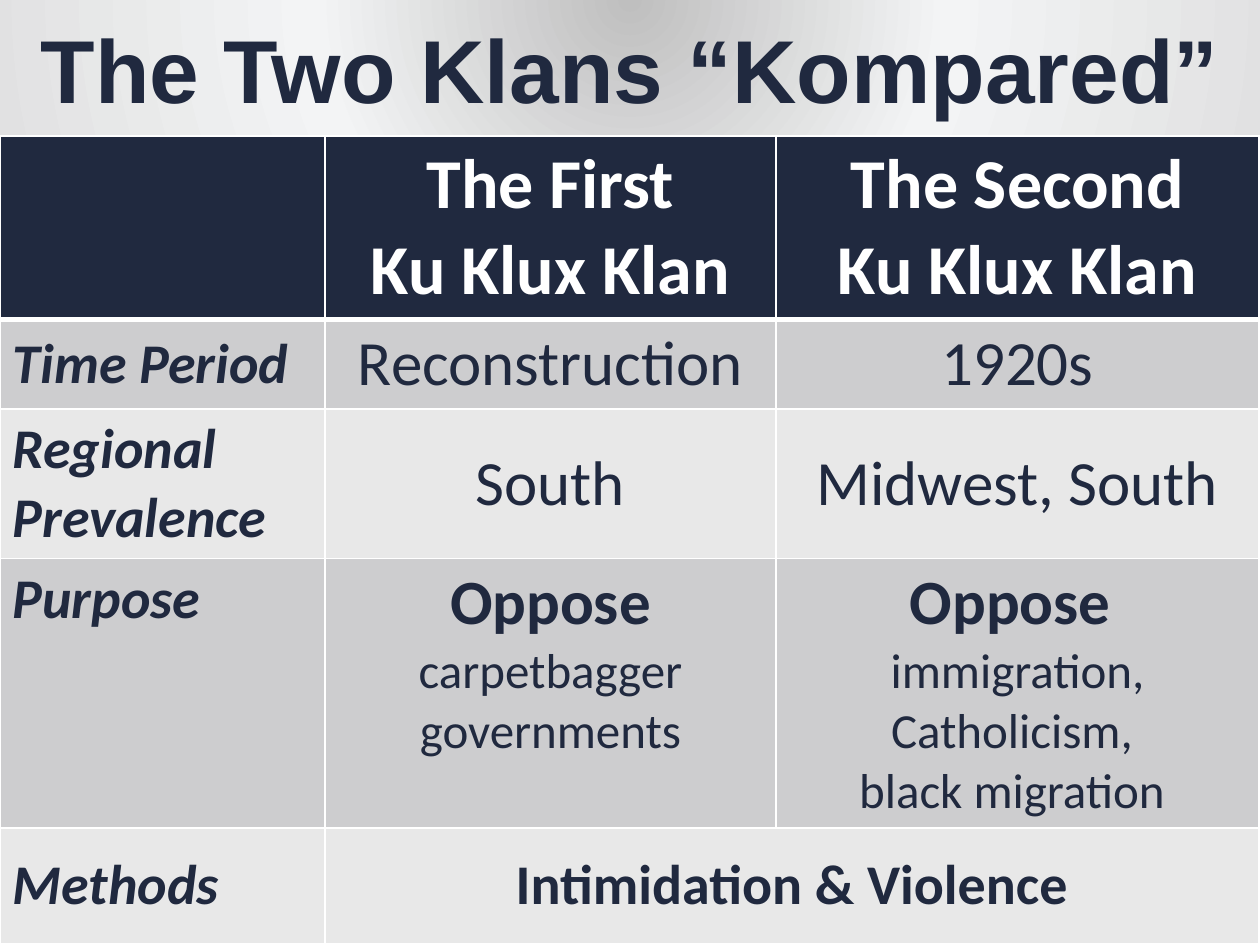
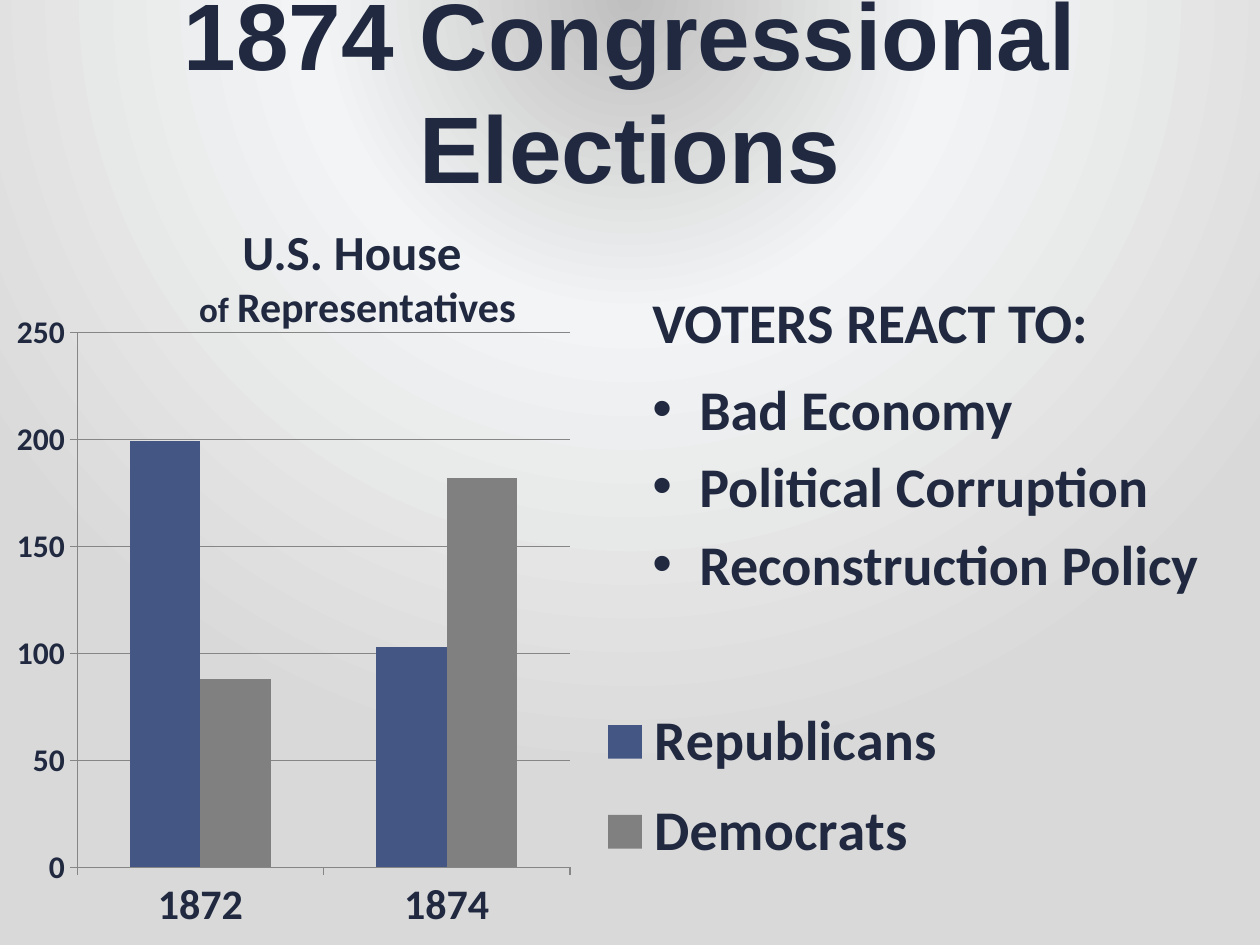
from pptx import Presentation
from pptx import util as u
from pptx.chart.data import CategoryChartData
from pptx.dml.color import RGBColor
from pptx.enum import chart as ch, text as tx
from pptx.oxml import parse_xml
from pptx.oxml.ns import qn
from lxml import etree

PX = 914400 / 126
WIDTH, HEIGHT = 1260, 945
COLORS = {
    "navy": "20293F", "white": "FFFFFF", "band_dark": "CDCDCF", "band_light": "E8E8E8",
    "republican": "435684", "democrat": "808080", "grid": "868686",
    "glow": "BFBFBF", "halo": "F3F4F5", "edge": "D9D9D9",
}
NS = ('xmlns:a="http://schemas.openxmlformats.org/drawingml/2006/main" '
      'xmlns:p="http://schemas.openxmlformats.org/presentationml/2006/main" '
      'xmlns:c="http://schemas.openxmlformats.org/drawingml/2006/chart"')
LEFT, CENTER = tx.PP_ALIGN.LEFT, tx.PP_ALIGN.CENTER
TOP, MIDDLE, BOTTOM = tx.MSO_ANCHOR.TOP, tx.MSO_ANCHOR.MIDDLE, tx.MSO_ANCHOR.BOTTOM


def px(length):
    return u.Emu(round(length * PX))


def rgb(name):
    return RGBColor.from_string(COLORS[name])


def style_font(font, size, bold=True, italic=False, color="navy", face="Calibri"):
    font.name, font.size = face, u.Pt(size)
    font.bold, font.italic = bold, italic
    font.color.rgb = rgb(color)


def write(frame, *paragraphs, align=LEFT, gap=0, bullet=False, **font_format):
    for index, content in enumerate(paragraphs):
        paragraph = frame.add_paragraph() if index else frame.paragraphs[0]
        if bullet:
            properties = paragraph._p.get_or_add_pPr()
            properties.set("marL", str(px(47)))
            properties.set("indent", str(-px(47)))
            properties.append(parse_xml(f'<a:buFont {NS} typeface="Arial"/>'))
            properties.append(parse_xml(f'<a:buChar {NS} char="•"/>'))
        paragraph.alignment = align
        if index and gap:
            paragraph.space_before = u.Pt(gap)
        runs = [(content, {})] if isinstance(content, str) else content
        for words, changes in runs:
            run = paragraph.add_run()
            run.text = words
            style_font(run.font, **{**font_format, **changes})


def set_background(master):
    stops = "".join(
        f'<a:gs pos="{position * 1000}"><a:srgbClr val="{COLORS[name]}"/></a:gs>'
        for position, name in ((0, "glow"), (40, "halo"), (100, "edge")))
    content = master.element.cSld
    for old in content.findall(qn("p:bg")):
        content.remove(old)
    content.insert(0, parse_xml(
        f'<p:bg {NS}><p:bgPr><a:gradFill rotWithShape="1"><a:gsLst>{stops}</a:gsLst>'
        '<a:path path="circle"><a:fillToRect l="50000" t="-80000" r="50000" b="180000"/>'
        '</a:path></a:gradFill><a:effectLst/></p:bgPr></p:bg>'))


def titled_slide(prs, heading, size, top, height):
    slide = prs.slides.add_slide(prs.slide_layouts[5])
    title = slide.shapes.title
    title.left, title.top, title.width, title.height = map(px, (0, top, WIDTH, height))
    frame = title.text_frame
    frame.word_wrap = True
    frame.auto_size = tx.MSO_AUTO_SIZE.NONE
    frame.vertical_anchor = MIDDLE
    write(frame, heading, align=CENTER, size=size, face="Arial")
    return slide


def add_text(slide, box, *paragraphs, anchor=TOP, **text_format):
    frame = slide.shapes.add_textbox(*map(px, box)).text_frame
    frame.word_wrap = True
    frame.vertical_anchor = anchor
    write(frame, *paragraphs, **text_format)


def border_cell(cell, bottom_width):
    properties = cell._tc.get_or_add_tcPr()
    widths = {"lnL": 1, "lnR": 1, "lnT": 1, "lnB": bottom_width}
    for position, (side, width) in enumerate(widths.items()):
        properties.insert(position, parse_xml(
            f'<a:{side} {NS} w="{u.Pt(width)}"><a:solidFill>'
            f'<a:srgbClr val="{COLORS["white"]}"/></a:solidFill></a:{side}>'))


def comparison_table(slide, box):
    header = dict(size=40, color="white", align=CENTER)
    label = dict(size=32, italic=True)
    answer = dict(size=36, bold=False, align=CENTER)
    purpose = dict(size=28, bold=False, align=CENTER)
    oppose = ("Oppose ", dict(size=36, bold=True))
    rows = [
        (181, TOP, [None, (["The First", "Ku Klux Klan"], header),
                    (["The Second", "Ku Klux Klan"], header)]),
        (88, MIDDLE, [(["Time Period"], label), (["Reconstruction"], answer),
                      (["1920s"], answer)]),
        (147, MIDDLE, [(["Regional Prevalence"], label), (["South"], answer),
                       (["Midwest, South"], answer)]),
        (266, TOP, [(["Purpose"], label),
                    ([[oppose, ("carpetbagger governments", {})]], purpose),
                    ([[oppose], "immigration, Catholicism, ", "black migration "], purpose)]),
        (116, MIDDLE, [(["Methods"], label),
                       (["Intimidation & Violence"], dict(size=32, align=CENTER)), None]),
    ]
    table = slide.shapes.add_table(len(rows), 3, *map(px, box)).table
    table.horz_banding = False
    for column, width in zip(table.columns, (325, 451, 483)):
        column.width = px(width)
    for r, (height, anchor, entries) in enumerate(rows):
        table.rows[r].height = px(height)
        for c, entry in enumerate(entries):
            cell = table.cell(r, c)
            cell.fill.solid()
            cell.fill.fore_color.rgb = rgb(
                "navy" if r == 0 else "band_dark" if r % 2 else "band_light")
            border_cell(cell, 1 if r else 3)
            cell.vertical_anchor = anchor
            if entry:
                paragraphs, text_format = entry
                write(cell.text_frame, *paragraphs, **text_format)
    table.cell(4, 1).merge(table.cell(4, 2))


def manual_layout(x, y, w, h, inner=False):
    target = '<c:layoutTarget val="inner"/>' if inner else ""
    modes = '<c:xMode val="edge"/><c:yMode val="edge"/>'
    sizes = "".join(f'<c:{key} val="{value}"/>' for key, value in zip("xywh", (x, y, w, h)))
    return parse_xml(f'<c:layout {NS}><c:manualLayout>{target}{modes}{sizes}'
                     '</c:manualLayout></c:layout>')


def house_chart(slide, box):
    seats = CategoryChartData()
    seats.categories = ["1872", "1874"]
    seats.add_series("Republicans", (199, 103))
    seats.add_series("Democrats", (88, 182))
    chart = slide.shapes.add_chart(
        ch.XL_CHART_TYPE.COLUMN_CLUSTERED, *map(px, box), seats).chart
    style_font(chart.font, 18)
    chart.has_title = False

    plot = chart.plots[0]
    plot.gap_width, plot.overlap = 150, 0
    plot.vary_by_categories = False
    for series, party in zip(plot.series, ("republican", "democrat")):
        series.format.fill.solid()
        series.format.fill.fore_color.rgb = rgb(party)

    years, count = chart.category_axis, chart.value_axis
    count.minimum_scale, count.maximum_scale, count.major_unit = 0, 250, 50
    count.has_major_gridlines = True
    for axis, size in ((years, 24), (count, 18)):
        style_font(axis.tick_labels.font, size)
        axis.major_tick_mark = ch.XL_TICK_MARK.OUTSIDE
    for rule in (years, count, count.major_gridlines):
        rule.format.line.color.rgb = rgb("grid")
        rule.format.line.width = u.Pt(0.75)

    chart.has_legend = True
    legend = chart.legend
    legend.position = ch.XL_LEGEND_POSITION.RIGHT
    legend.include_in_layout = False
    style_font(legend.font, 32)

    areas = ((chart._chartSpace.chart.plotArea, manual_layout(0.08, 0.05, 0.51, 0.83, True)),
             (legend._element, manual_layout(0.62, 0.6, 0.36, 0.31)))
    for area, layout in areas:
        for old in area.findall(qn("c:layout")):
            area.remove(old)
        position = area.find(qn("c:legendPos"))
        area.insert(0 if position is None else area.index(position) + 1, layout)


def voter_reasons(slide, left, top):
    add_text(slide, (left, top, 557, 88), "VOTERS REACT TO:", size=32, anchor=BOTTOM)
    add_text(slide, (left, top + 95, 620, 476), "Bad Economy", "Political Corruption",
             "Reconstruction Policy", size=32, bullet=True, gap=6)


def klans_slide(prs):
    slide = titled_slide(prs, "The Two Klans “Kompared”", 51, 0, 136)
    comparison_table(slide, (0, 136, 1259, 798))


def elections_slide(prs):
    slide = titled_slide(prs, "1874 Congressional Elections", 54, 10, 158)
    add_text(slide, (95, 212, 525, 125), "U.S. House ",
             [("of ", dict(size=20)), ("Representatives", dict(size=24))],
             size=28, align=CENTER, anchor=BOTTOM)
    house_chart(slide, (0, 300, 966, 645))
    voter_reasons(slide, 640, 273)


def main():
    prs = Presentation()
    prs.slide_width, prs.slide_height = px(WIDTH), px(HEIGHT)
    set_background(prs.slide_master)
    klans_slide(prs)
    elections_slide(prs)
    prs.save("out.pptx")


if __name__ == "__main__":
    main()
